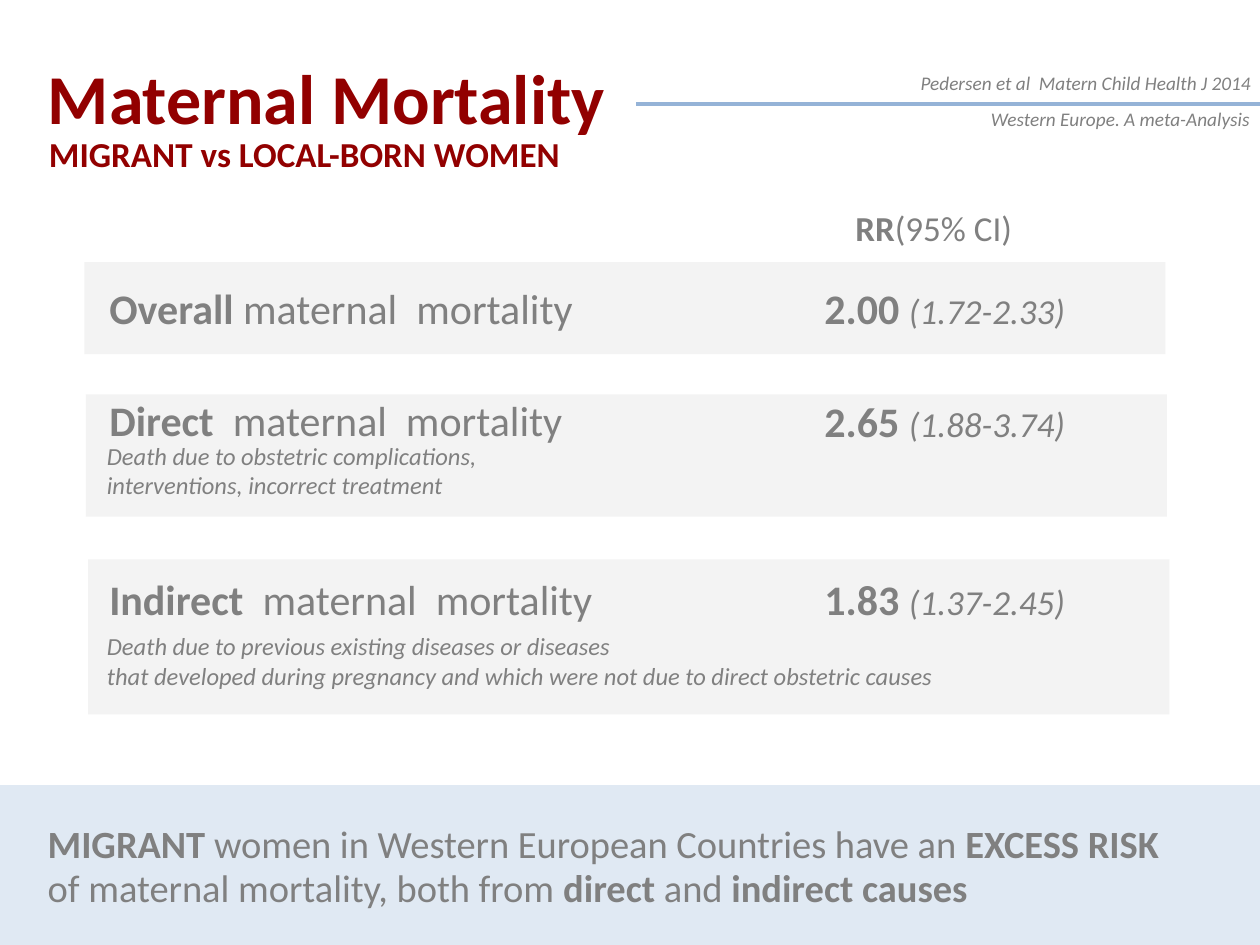
"""Build a slide on maternal mortality among migrant and local-born women."""
from lxml import etree
from pptx import Presentation
from pptx.dml.color import RGBColor
from pptx.enum.shapes import MSO_CONNECTOR, MSO_SHAPE
from pptx.enum.text import MSO_ANCHOR, MSO_AUTO_SIZE, PP_ALIGN
from pptx.oxml.ns import qn
from pptx.util import Pt

GREY = RGBColor(0x80, 0x80, 0x80)
DARK_RED = RGBColor(0x92, 0x00, 0x00)
PANEL_GREY = RGBColor(0xF2, 0xF2, 0xF2)
BANNER_BLUE = RGBColor(0xDC, 0xE6, 0xF2)
RULE_BLUE = RGBColor(0x95, 0xB3, 0xD7)


def add_panel(left, top, width, height, color):
    panel = slide.shapes.add_shape(
        MSO_SHAPE.RECTANGLE, Pt(left), Pt(top), Pt(width), Pt(height))
    panel.shadow.inherit = False
    panel.line.fill.background()
    panel.fill.solid()
    panel.fill.fore_color.rgb = color
    solid = panel.fill._xPr.find(qn("a:solidFill"))
    etree.SubElement(solid[0], qn("a:alpha"), val="88000")


def add_text(box, lines, color=GREY, align=PP_ALIGN.LEFT, anchor=MSO_ANCHOR.TOP,
             spacing=None, wrap=True):
    frame = slide.shapes.add_textbox(*map(Pt, box)).text_frame
    frame.word_wrap = wrap
    frame.vertical_anchor = anchor
    if anchor == MSO_ANCHOR.TOP:
        frame.auto_size = MSO_AUTO_SIZE.SHAPE_TO_FIT_TEXT
    for index, line in enumerate(lines):
        paragraph = frame.add_paragraph() if index else frame.paragraphs[0]
        paragraph.alignment = align
        paragraph.line_spacing = spacing
        for text, size, style in line:
            run = paragraph.add_run()
            run.text = text
            run.font.name = "Calibri"
            run.font.size = Pt(size)
            run.font.bold = style == "bold"
            run.font.italic = style == "italic"
            run.font.color.rgb = color


presentation = Presentation()
presentation.slide_width = Pt(720)
presentation.slide_height = Pt(540)
slide = presentation.slides.add_slide(presentation.slide_layouts[5])

title = slide.shapes.title
title.left, title.top, title.width, title.height = map(Pt, (20.2, 15.1, 401.8, 79.9))
title.text_frame.text = "Maternal Mortality"
title.text_frame.auto_size = MSO_AUTO_SIZE.NONE
title.text_frame.vertical_anchor = MSO_ANCHOR.MIDDLE
heading = title.text_frame.paragraphs[0]
heading.alignment = PP_ALIGN.LEFT
heading.runs[0].font.name = "Calibri"
heading.runs[0].font.size = Pt(40)
heading.runs[0].font.bold = True
heading.runs[0].font.color.rgb = DARK_RED

for left, top, height in [(48.2, 149.8, 52.6), (49, 225.4, 69.8), (50.4, 319.7, 88.6)]:
    add_panel(left, top, 617.8, height, PANEL_GREY)

outcomes = [
    ("Overall ", "2.00 ", "(1.72-2.33)", 149.8, 157.7),
    ("Direct  ", "2.65 ", "(1.88-3.74)", 213.8, 222.2),
    ("Indirect  ", "1.83 ", "(1.37-2.45)", 316.1, 324),
]
for kind, ratio, interval, label_top, ratio_top in outcomes:
    add_text((55.4, label_top, 400.3, 52.6),
             [[(kind, 24, "bold"), ("maternal  mortality", 24, "")]],
             anchor=MSO_ANCHOR.MIDDLE)
    add_text((447.8, ratio_top, 184.3, 36),
             [[(ratio, 24, "bold"), (interval, 20, "italic")]], align=PP_ALIGN.CENTER)

definitions = [
    (248.4, 581, ["Death due to obstetric complications,",
                  "interventions, incorrect treatment"]),
    (357.1, 538.6, ["Death due to previous existing diseases or diseases",
                    "that developed during pregnancy and which were not due to "
                    "direct obstetric causes"]),
]
for top, width, lines in definitions:
    add_text((54, top, width, 41), [[(line, 14, "italic")] for line in lines])

citations = [
    (406.1, 37.4, 316.1, "Pedersen et al  Matern Child Health J 2014"),
    (460.8, 57.6, 260.6, "Western Europe. A meta-Analysis"),
]
for left, top, width, citation in citations:
    add_text((left, top, width, 20.9), [[(citation, 11, "italic")]], align=PP_ALIGN.RIGHT)

add_text((481.7, 114.5, 105.1, 31.7), [[("RR", 20, "bold"), ("(95% CI)", 20, "")]],
         wrap=False)

add_panel(-36.7, 448.6, 816.5, 93.6, BANNER_BLUE)
conclusion = [
    [("MIGRANT ", 22, "bold"),
     ("women in Western European Countries have an ", 22, ""),
     ("EXCESS RISK", 22, "bold")],
    [("of maternal mortality, both from ", 22, ""), ("direct", 22, "bold"),
     (" and ", 22, ""), ("indirect causes", 22, "bold")],
]
add_text((20.2, 466.6, 707.8, 57.6), conclusion, spacing=Pt(25))

rule = slide.shapes.add_connector(
    MSO_CONNECTOR.STRAIGHT, Pt(363.6), Pt(59.5), Pt(789.1), Pt(59.5))
rule.line.color.rgb = RULE_BLUE
rule.line.width = Pt(2.25)
etree.SubElement(rule._element.spPr, qn("a:effectLst"))

add_text((20.9, 71.3, 373, 32.4), [[("MIGRANT vs LOCAL-BORN WOMEN", 20, "bold")]],
         color=DARK_RED, spacing=Pt(25))

presentation.save("out.pptx")
